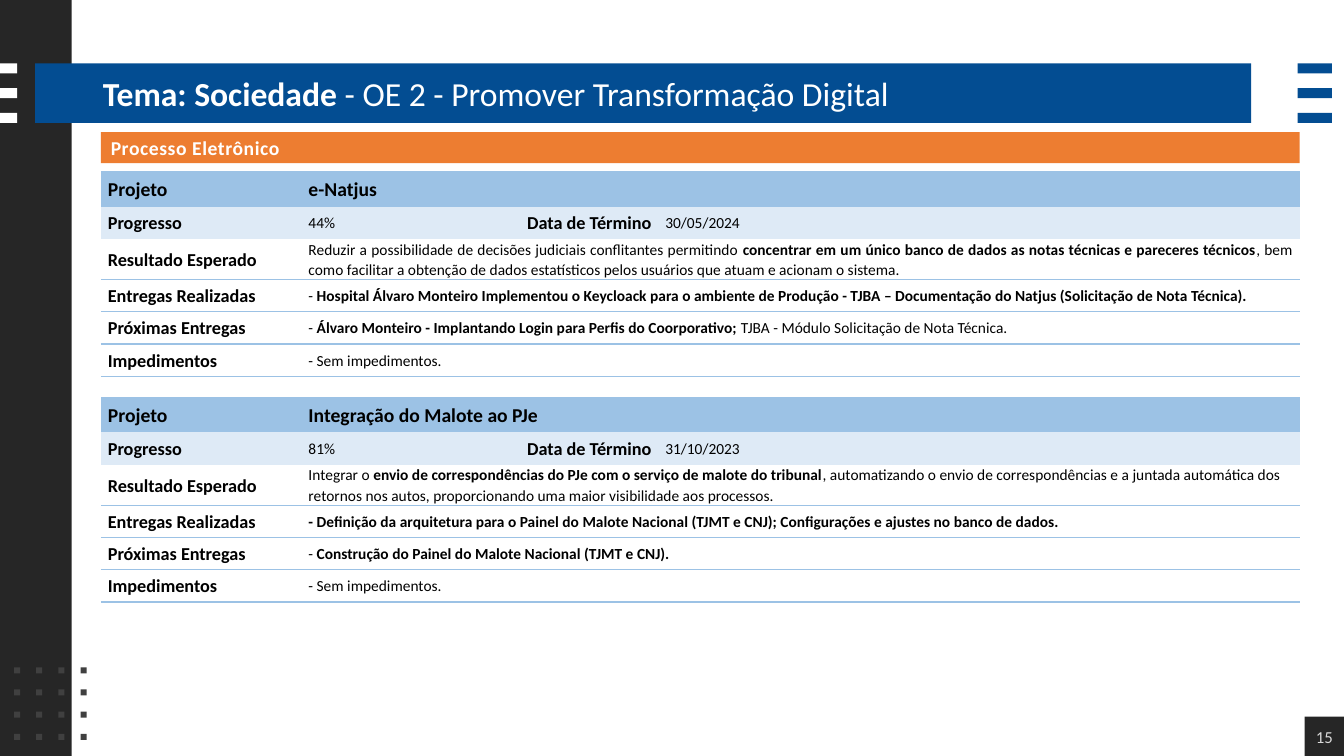
from itertools import product
from lxml.etree import SubElement
from pptx import Presentation
from pptx.dml.color import RGBColor
from pptx.enum.shapes import MSO_SHAPE
from pptx.enum.text import MSO_ANCHOR, MSO_AUTO_SIZE, PP_ALIGN
from pptx.oxml.ns import qn
from pptx.util import Inches, Pt

FONT = "Calibri"
BLACK = RGBColor(0x00, 0x00, 0x00)
WHITE = RGBColor(0xFF, 0xFF, 0xFF)
CHARCOAL = RGBColor(0x26, 0x26, 0x26)
DOT_GRAY = RGBColor(0x40, 0x40, 0x40)
PAGE_GRAY = RGBColor(0xD9, 0xD9, 0xD9)
NAVY = RGBColor(0x03, 0x4D, 0x92)
ORANGE = RGBColor(0xED, 0x7D, 0x31)
HEADER_BLUE = RGBColor(0x9C, 0xC2, 0xE5)
PALE_BLUE = RGBColor(0xDE, 0xEA, 0xF6)
NO_GRID_STYLE = "{2D5ABB26-0587-4C30-8999-92F81FD0307C}"

TITLE = [("Tema: Sociedade ", True), ("- OE 2 - Promover Transformação Digital", False)]
SECTION = "Processo Eletrônico"
PAGE_NUMBER = "15"
LEFT, JUSTIFY = PP_ALIGN.LEFT, PP_ALIGN.JUSTIFY

PROJECTS = [
    {
        "top": 1.7,
        "name": "e-Natjus",
        "progress": "44%",
        "end": "30/05/2024",
        "details": [
            ("Resultado Esperado", JUSTIFY, [
                ("Reduzir a possibilidade de decisões judiciais conflitantes permitindo ", False),
                ("concentrar em um único banco de dados as notas técnicas e pareceres técnicos", True),
                (", bem como facilitar a obtenção de dados estatísticos pelos usuários que atuam "
                 "e acionam o sistema.", False)]),
            ("Entregas Realizadas", JUSTIFY, [
                ("- ", False),
                ("Hospital Álvaro Monteiro Implementou o Keycloack para o ambiente de Produção - "
                 "TJBA – Documentação do Natjus (Solicitação de Nota Técnica).", True)]),
            ("Próximas Entregas", JUSTIFY, [
                ("- ", False),
                ("Álvaro Monteiro - Implantando Login para Perfis do Coorporativo; ", True),
                ("TJBA - Módulo Solicitação de Nota Técnica.", False)]),
            ("Impedimentos", JUSTIFY, [("- Sem impedimentos.", False)]),
        ],
    },
    {
        "top": 3.94,
        "name": "Integração do Malote ao PJe",
        "progress": "81%",
        "end": "31/10/2023",
        "details": [
            ("Resultado Esperado", LEFT, [
                ("Integrar o ", False),
                ("envio de correspondências do PJe com o serviço de malote do tribunal", True),
                (", automatizando o envio de correspondências e a juntada automática dos retornos "
                 "nos autos, proporcionando uma maior visibilidade aos processos.", False)]),
            ("Entregas Realizadas", JUSTIFY, [
                ("- Definição da arquitetura para o Painel do Malote Nacional (TJMT e CNJ); "
                 "Configurações e ajustes no banco de dados.", True)]),
            ("Próximas Entregas", JUSTIFY, [
                ("-", False),
                (" Construção do Painel do Malote Nacional (TJMT e CNJ).", True)]),
            ("Impedimentos", JUSTIFY, [("- Sem impedimentos.", False)]),
        ],
    },
]
COLUMN_WIDTHS = [1.99, 1.77, 1.77, 6.36]
ROW_HEIGHTS = [0.35, 0.32, 0.4, 0.32, 0.32, 0.32]


def add_block(page, left, top, width, height, color):
    block = page.shapes.add_shape(
        MSO_SHAPE.RECTANGLE, Inches(left), Inches(top), Inches(width), Inches(height))
    block.shadow.inherit = False
    block.fill.solid()
    block.fill.fore_color.rgb = color
    block.line.fill.background()
    return block


def write_spans(para, spans, size, color, align=LEFT):
    para.alignment = align
    for text, bold in spans:
        span = para.add_run()
        span.text = text
        span.font.name = FONT
        span.font.size = Pt(size)
        span.font.bold = bold
        span.font.color.rgb = color


def write_cell(cell, spans, size, align=LEFT):
    cell.vertical_anchor = MSO_ANCHOR.MIDDLE
    cell.margin_left = cell.margin_right = Inches(0.07)
    cell.margin_top = cell.margin_bottom = 0
    para = cell.text_frame.paragraphs[0]
    para.line_spacing = 1.07
    write_spans(para, spans, size, BLACK, align)


def underline_cell(cell):
    properties = cell._tc.get_or_add_tcPr()
    border = SubElement(properties, qn("a:lnB"), w=str(Pt(1)))
    fill = SubElement(border, qn("a:solidFill"))
    SubElement(fill, qn("a:srgbClr"), val=str(HEADER_BLUE))


def add_project(page, project):
    frame = page.shapes.add_table(
        len(ROW_HEIGHTS), len(COLUMN_WIDTHS), Inches(1), Inches(project["top"]),
        Inches(sum(COLUMN_WIDTHS)), Inches(sum(ROW_HEIGHTS)))
    table = frame.table
    table.first_row = table.horz_banding = False
    table._tbl.tblPr.find(qn("a:tableStyleId")).text = NO_GRID_STYLE
    for column, width in zip(table.columns, COLUMN_WIDTHS):
        column.width = Inches(width)
    for index, (row, height) in enumerate(zip(table.rows, ROW_HEIGHTS)):
        row.height = Inches(height)
        for cell in row.cells:
            if index < 2:
                cell.fill.solid()
                cell.fill.fore_color.rgb = (HEADER_BLUE, PALE_BLUE)[index]
            else:
                underline_cell(cell)
                cell.fill.background()
        if index != 1:
            table.cell(index, 1).merge(table.cell(index, 3))

    write_cell(table.cell(0, 0), [("Projeto", True)], 14)
    write_cell(table.cell(0, 1), [(project["name"], True)], 14)
    write_cell(table.cell(1, 0), [("Progresso", True)], 13)
    write_cell(table.cell(1, 1), [(project["progress"], False)], 11)
    write_cell(table.cell(1, 2), [("Data de Término", True)], 13, PP_ALIGN.RIGHT)
    write_cell(table.cell(1, 3), [(project["end"], False)], 11)
    for index, (label, align, spans) in enumerate(project["details"], start=2):
        write_cell(table.cell(index, 0), [(label, True)], 13)
        write_cell(table.cell(index, 1), spans, 11, align)


def add_decoration(page):
    add_block(page, 0, 0, 0.71, 7.5, CHARCOAL)
    add_block(page, 0.35, 0.63, 12.06, 0.59, NAVY)
    for left, width, color in [(0, 0.17, WHITE), (12.87, 0.34, NAVY)]:
        for step in range(3):
            add_block(page, left, 0.63 + 0.245 * step, width, 0.1, color)
    for row, column in product(range(4), range(4)):
        add_block(page, 0.14 + 0.22 * column, 6.62 + 0.22 * row, 0.06, 0.06, DOT_GRAY)


def add_headings(page):
    title = page.shapes.title
    page.shapes._spTree.append(title._element)
    title.left, title.top = Inches(0.92), Inches(0.64)
    title.width, title.height = Inches(11.5), Inches(0.56)
    title.text_frame.auto_size = MSO_AUTO_SIZE.NONE
    title.text_frame.vertical_anchor = MSO_ANCHOR.MIDDLE
    write_spans(title.text_frame.paragraphs[0], TITLE, 24, WHITE)

    banner = add_block(page, 1, 1.31, 11.89, 0.31, ORANGE)
    banner.text_frame.vertical_anchor = MSO_ANCHOR.MIDDLE
    para = banner.text_frame.paragraphs[0]
    write_spans(para, [(SECTION, True)], 14, WHITE)
    para.runs[0].font._element.set("spc", "40")


def add_page_number(page):
    box = add_block(page, 12.94, 7.11, 0.39, 0.39, CHARCOAL)
    frame = box.text_frame
    frame.margin_left = frame.margin_right = frame.margin_top = frame.margin_bottom = 0
    frame.vertical_anchor = MSO_ANCHOR.MIDDLE
    write_spans(frame.paragraphs[0], [(PAGE_NUMBER, False)], 12, PAGE_GRAY, PP_ALIGN.CENTER)


def main():
    deck = Presentation()
    deck.slide_width, deck.slide_height = Inches(13.33), Inches(7.5)
    page = deck.slides.add_slide(deck.slide_layouts[5])
    add_decoration(page)
    add_headings(page)
    add_page_number(page)
    for project in PROJECTS:
        add_project(page, project)
    deck.save("out.pptx")


if __name__ == "__main__":
    main()
